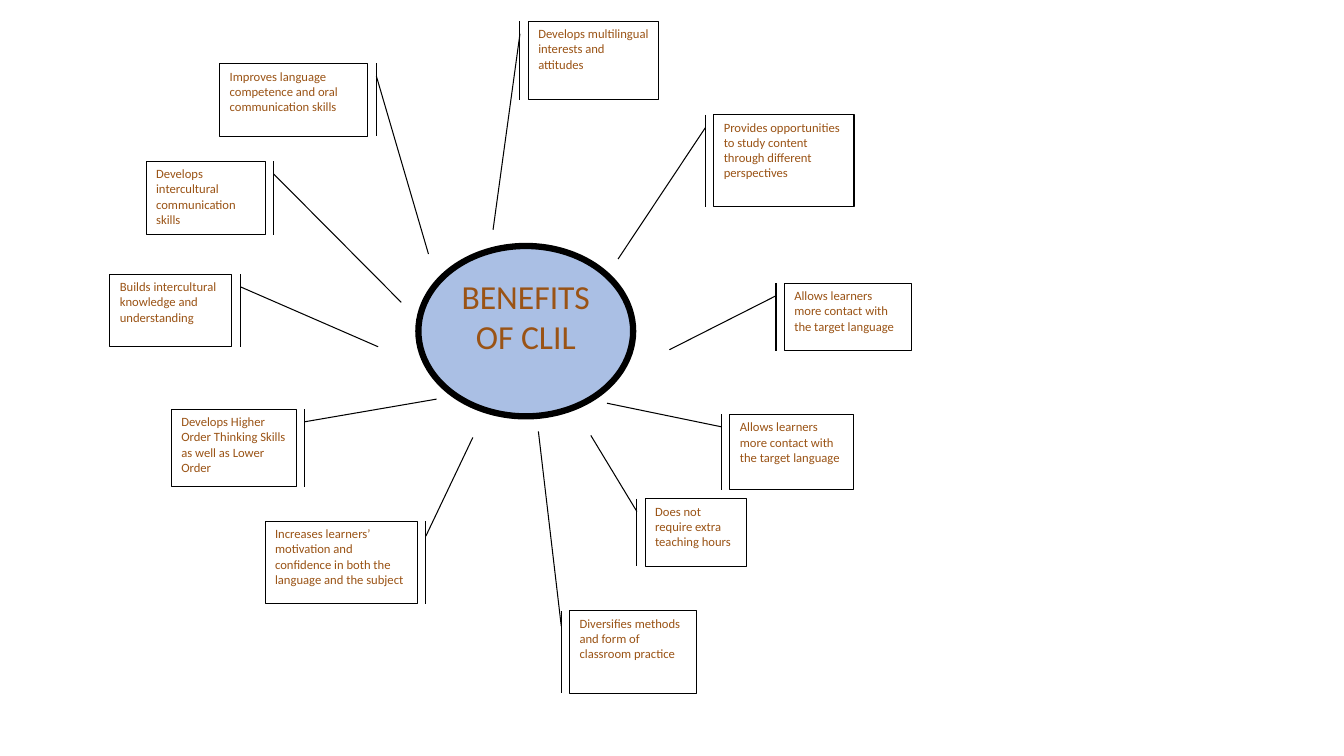
import pptx
import pptx.util
import pptx.dml.color
import pptx.enum.shapes
import pptx.enum.text
import lxml.etree

SLIDE_SIZE = (13.33, 7.5)
HUB = ("BENEFITS OF CLIL", (4.15, 2.44, 2.13, 1.69))
BAR_GAP = 1 / 12
# fields: wording, box (left, top, width, height), pointer tip (x, y), drop of the pointer below the box top
BENEFITS = [
    ("Develops intercultural communication skills", (1.45, 1.6, 1.18, 0.73), (3.98, 3.0), 0.125),
    ("Provides opportunities to study content through different perspectives",
     (7.08, 1.14, 1.39, 0.91), (6.13, 2.57), 0.125),
    ("Improves language competence and oral communication skills",
     (2.18, 0.63, 1.47, 0.72), (4.25, 2.52), 0.125),
    ("Develops multilingual interests and attitudes", (5.24, 0.21, 1.29, 0.78), (4.89, 2.28), 0.125),
    ("Builds intercultural knowledge and understanding", (1.09, 2.72, 1.21, 0.72), (3.75, 3.44), 0.125),
    ("Allows learners more contact with the target language",
     (7.78, 2.81, 1.26, 0.67), (6.64, 3.47), 0.125),
    ("Develops Higher Order Thinking Skills as well as Lower Order",
     (1.7, 4.06, 1.24, 0.77), (4.33, 3.96), 0.125),
    ("Allows learners more contact with the target language",
     (7.24, 4.11, 1.23, 0.75), (6.02, 4.0), 0.125),
    ("Increases learners’ motivation and confidence in both the language and the subject",
     (2.63, 5.17, 1.51, 0.82), (4.69, 4.34), 0.15),
    ("Does not require extra teaching hours", (6.4, 4.95, 1.0, 0.67), (5.86, 4.32), 0.125),
    ("Diversifies methods and form of classroom practice",
     (5.65, 6.06, 1.26, 0.82), (5.34, 4.28), 0.15),
]
INK, PAPER, BLUE, BROWN = "000000", "FFFFFF", "4472C4", "9A5315"
SHAPES = pptx.enum.shapes.MSO_SHAPE
ALIGN = pptx.enum.text.PP_ALIGN


def color(code):
    """Turn a hex string into a colour."""
    return pptx.dml.color.RGBColor.from_string(code)


def write(shape, text, size, align=ALIGN.LEFT):
    """Put wrapped brown text at the top of a shape."""
    frame = shape.text_frame
    frame.word_wrap = True
    frame.vertical_anchor = pptx.enum.text.MSO_ANCHOR.TOP
    paragraph = frame.paragraphs[0]
    paragraph.text, paragraph.alignment = text, align
    paragraph.font.name = "Calibri"
    paragraph.font.size = pptx.util.Pt(size)
    paragraph.font.color.rgb = color(BROWN)


def add_outlined(slide, preset, box, fill, weight):
    """Add a filled preset shape with a black outline."""
    shape = slide.shapes.add_shape(preset, *map(pptx.util.Inches, box))
    shape.shadow.inherit = False
    shape.fill.solid()
    shape.fill.fore_color.rgb = color(fill)
    shape.line.color.rgb = color(INK)
    shape.line.width = pptx.util.Pt(weight)
    return shape


def add_hub(slide):
    """Add the translucent central ellipse."""
    title, box = HUB
    hub = add_outlined(slide, SHAPES.OVAL, box, BLUE, 4.5)
    tint = hub._element.spPr.find(pptx.oxml.ns.qn("a:solidFill"))[0]
    lxml.etree.SubElement(tint, pptx.oxml.ns.qn("a:alpha"), val="45000")
    write(hub, title, 24, ALIGN.CENTER)


def add_benefit(slide, wording, box, tip, drop):
    """Add a callout whose bar stands on the side facing its tip."""
    left, top, width, height = box
    callout = add_outlined(slide, SHAPES.LINE_CALLOUT_1_BORDER_AND_ACCENT_BAR, box, PAPER, 0.75)
    bar = -BAR_GAP if tip[0] < left else width + BAR_GAP
    pointer = (drop / height, bar / width, (tip[1] - top) / height, (tip[0] - left) / width)
    for index, share in enumerate(pointer):
        callout.adjustments[index] = share
    write(callout, wording, 9)


def main():
    """Build the slide and save it."""
    deck = pptx.Presentation()
    deck.slide_width, deck.slide_height = map(pptx.util.Inches, SLIDE_SIZE)
    slide = deck.slides.add_slide(deck.slide_layouts[6])
    add_hub(slide)
    for benefit in BENEFITS:
        add_benefit(slide, *benefit)
    deck.save("out.pptx")


if __name__ == "__main__":
    main()
